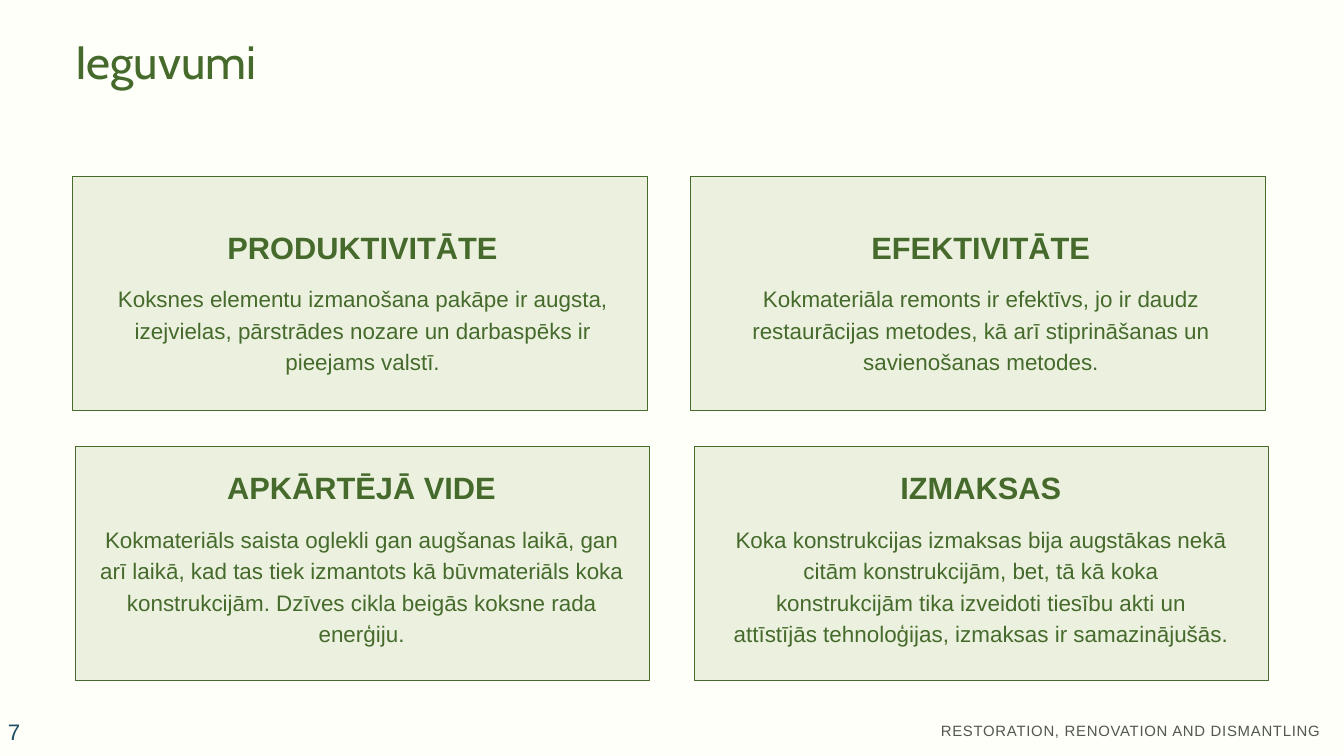
"""Build the slide on the four benefits of timber construction."""
from pptx import Presentation
from pptx.dml.color import RGBColor
from pptx.enum.shapes import MSO_SHAPE as Shape
from pptx.enum.text import MSO_ANCHOR as Anchor, MSO_AUTO_SIZE as AutoSize, PP_ALIGN as Align
from pptx.util import Inches, Pt

COLORS = {
    "page": "FEFFF8",
    "card": "EBF1DE",
    "green": "456A2C",
    "footer": "52584D",
    "number": "1E4D65",
}
CARD_WIDTH, CARD_HEIGHT = 8.55, 3.48


def color(name):
    return RGBColor.from_string(COLORS[name])


def add_text(shapes, text, left, top, width, height, size, font="Arial", fill="green",
             bold=False, align=Align.LEFT, leading=None, tracking=0, inset=0,
             anchor=Anchor.TOP):
    box = shapes.add_textbox(Inches(left), Inches(top), Inches(width), Inches(height))
    frame = box.text_frame
    frame.word_wrap = True
    frame.auto_size = AutoSize.NONE
    frame.vertical_anchor = anchor
    frame.margin_left = frame.margin_right = Inches(inset)
    frame.margin_top = frame.margin_bottom = Inches(inset / 2)
    para = frame.paragraphs[0]
    para.alignment = align
    if leading:
        para.line_spacing = Pt(leading)
    span = para.add_run()
    span.text = text
    span.font.name = font
    span.font.size = Pt(size)
    span.font.bold = bold
    span.font.color.rgb = color(fill)
    if tracking:
        span._r.get_or_add_rPr().set("spc", str(round(tracking * 100)))


deck = Presentation()
deck.slide_width, deck.slide_height = Inches(20), Inches(11.25)
page = deck.slides.add_slide(deck.slide_layouts[6])
page.background.fill.solid()
page.background.fill.fore_color.rgb = color("page")

add_text(page.shapes, "RESTORATION, RENOVATION AND DISMANTLING", 11.33, 10.7, 8.32, 0.29,
         size=16, fill="footer", align=Align.RIGHT, leading=22.4, tracking=0.8)
add_text(page.shapes, "Ieguvumi", 1.12, 0.39, 17.71, 0.86, size=50, font="Cabin", leading=66.8)

benefits = [
    (1.12, 6.64, 1.42, 6.96, 7.92, 1.86, "APKĀRTĒJĀ VIDE",
     "Kokmateriāls saista oglekli gan augšanas laikā, gan arī laikā, kad tas tiek izmantots "
     "kā būvmateriāls koka konstrukcijām. Dzīves cikla beigās koksne rada enerģiju."),
    (1.08, 2.62, 1.7, 3.38, 7.39, 1.39, "PRODUKTIVITĀTE",
     "Koksnes elementu izmanošana pakāpe ir augsta, izejvielas, pārstrādes nozare un "
     "darbaspēks ir pieejams valstī."),
    (10.28, 2.62, 10.9, 3.38, 7.39, 1.39, "EFEKTIVITĀTE",
     "Kokmateriāla remonts ir efektīvs, jo ir daudz restaurācijas metodes, kā arī "
     "stiprināšanas un savienošanas metodes."),
    (10.33, 6.64, 10.9, 6.96, 7.39, 1.86, "IZMAKSAS",
     "Koka konstrukcijas izmaksas bija augstākas nekā citām konstrukcijām, bet, tā kā koka "
     "konstrukcijām tika izveidoti tiesību akti un attīstījās tehnoloģijas, izmaksas ir "
     "samazinājušās."),
]
for card_left, card_top, left, top, width, body_height, heading, body in benefits:
    card = page.shapes.add_shape(Shape.RECTANGLE, Inches(card_left), Inches(card_top),
                                 Inches(CARD_WIDTH), Inches(CARD_HEIGHT))
    card.shadow.inherit = False
    card.fill.solid()
    card.fill.fore_color.rgb = color("card")
    card.line.color.rgb = color("green")
    card.line.width = Pt(0.75)
    group = page.shapes.add_group_shape()
    add_text(group.shapes, heading, left, top, width, 0.54,
             size=33, bold=True, align=Align.CENTER, leading=41.2)
    add_text(group.shapes, body, left, top + 0.8, width, body_height,
             size=24, align=Align.CENTER, leading=33.6)

add_text(page.shapes, "7", 0.02, 10.69, 2.33, 0.4, size=24, fill="number",
         tracking=1.2, inset=0.1, anchor=Anchor.MIDDLE)

deck.save("out.pptx")
